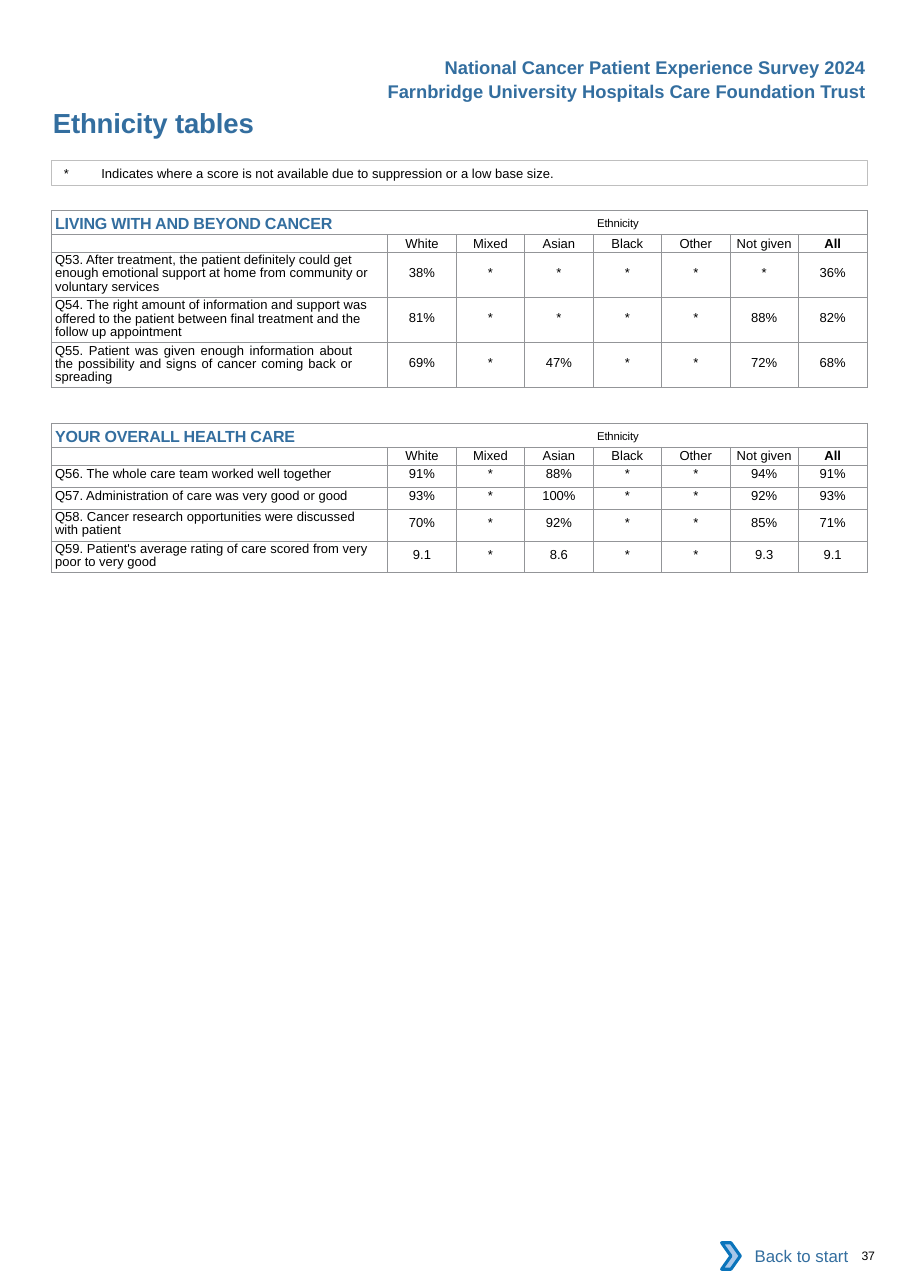
from lxml import etree
from pptx import Presentation
from pptx import util as u
from pptx.dml.color import RGBColor
from pptx.enum import shapes, text
from pptx.oxml.ns import qn

WIDTH, HEIGHT = 8.26, 11.69
LEFT, SPAN, QUESTION = 0.47, 7.4, 3.05
BLUE, BLACK, GREY, WHITE = "336E9F", "000000", "939598", "FFFFFF"
TITLE = "Ethnicity tables"
HEADINGS = ["National Cancer Patient Experience Survey 2024",
            "Farnbridge University Hospitals Care Foundation Trust"]
NOTE = "*\tIndicates where a score is not available due to suppression or a low base size."
GROUPS = ["White", "Mixed", "Asian", "Black", "Other", "Not given", "All"]
JUSTIFIED = "Q55"
TABLES = [
    (1.91, "LIVING WITH AND BEYOND CANCER", [
        (3, "Q53. After treatment, the patient definitely could get enough emotional support "
            "at home from community or voluntary services",
         ["38%", "*", "*", "*", "*", "*", "36%"]),
        (3, "Q54. The right amount of information and support was offered to the patient "
            "between final treatment and the follow up appointment",
         ["81%", "*", "*", "*", "*", "88%", "82%"]),
        (3, "Q55. Patient was given enough information about the possibility and signs of "
            "cancer coming back or spreading",
         ["69%", "*", "47%", "*", "*", "72%", "68%"]),
    ]),
    (3.84, "YOUR OVERALL HEALTH CARE", [
        (1, "Q56. The whole care team worked well together",
         ["91%", "*", "88%", "*", "*", "94%", "91%"]),
        (1, "Q57. Administration of care was very good or good",
         ["93%", "*", "100%", "*", "*", "92%", "93%"]),
        (2, "Q58. Cancer research opportunities were discussed with patient",
         ["70%", "*", "92%", "*", "*", "85%", "71%"]),
        (2, "Q59. Patient's average rating of care scored from very poor to very good",
         ["9.1", "*", "8.6", "*", "*", "9.3", "9.1"]),
    ]),
]
ROW_HEIGHT = {1: 0.2, 2: 0.29, 3: 0.41}
SCORE_TOP = {1: 0.02, 2: 0.06, 3: 0.12}
CENTER, RIGHT = text.PP_ALIGN.CENTER, text.PP_ALIGN.RIGHT
MIDDLE = text.MSO_ANCHOR.MIDDLE


def color(value):
    return RGBColor.from_string(value)


def apply(target, values):
    for name, value in values.items():
        setattr(target, name, value)


def margins(target, left=0, top=0, right=0, bottom=0):
    sides = dict(left=left, top=top, right=right, bottom=bottom)
    apply(target, {f"margin_{side}": u.Inches(size) for side, size in sides.items()})


def write(para, words, size=8.5, ink=BLACK, bold=False, spacing=0, **layout):
    apply(para, layout)
    span = para.add_run()
    span.text = words
    apply(span.font, dict(name="Arial", size=u.Pt(size), bold=bold))
    span.font.color.rgb = color(ink)
    if spacing:
        span.font._element.set("spc", str(spacing))
    return span


def indent(para, left, tab=None):
    properties = para._p.get_or_add_pPr()
    properties.set("marL", str(u.Inches(left)))
    if tab:
        stops = etree.SubElement(properties, qn("a:tabLst"))
        etree.SubElement(stops, qn("a:tab"), pos=str(u.Inches(tab)), algn="l")


def textbox(page, place, wrap=True):
    frame = page.shapes.add_textbox(*map(u.Inches, place)).text_frame
    frame.word_wrap = wrap
    return frame


def shape(page, kind, place, fill=None, line=None, weight=0.5):
    box = page.shapes.add_shape(kind, *map(u.Inches, place))
    box.shadow.inherit = False
    for paint, value in ((box.fill, fill), (box.line.fill, line)):
        if value:
            paint.solid()
            paint.fore_color.rgb = color(value)
        else:
            paint.background()
    if line:
        box.line.width = u.Pt(weight)
    return box


def prepare(cell):
    margins(cell)
    for side in ("lnL", "lnR", "lnT", "lnB"):
        edge = etree.SubElement(cell._tc.get_or_add_tcPr(), qn(f"a:{side}"), w=str(u.Pt(0.5)))
        fill = etree.SubElement(edge, qn("a:solidFill"))
        etree.SubElement(fill, qn("a:srgbClr"), val=GREY)
    cell.fill.background()


def add_scores(page, top, heading, questions):
    heights = [0.22, 0.16] + [ROW_HEIGHT[lines] for lines, *_ in questions]
    columns = len(GROUPS) + 1
    place = (LEFT, top, SPAN, sum(heights))
    table = page.shapes.add_table(len(heights), columns, *map(u.Inches, place)).table
    apply(table, dict(first_row=False, horz_banding=False))
    for row, height in zip(table.rows, heights):
        row.height = u.Inches(height)
    for index, column in enumerate(table.columns):
        column.width = u.Inches((SPAN - QUESTION) / len(GROUPS) if index else QUESTION)
    for cell in table.iter_cells():
        prepare(cell)

    banner = table.cell(0, 0)
    banner.merge(table.cell(0, columns - 1))
    banner.vertical_anchor = MIDDLE
    para = banner.text_frame.paragraphs[0]
    indent(para, 0.03, 4.92)
    write(para, heading + "\t", 10.5, BLUE, True, -10)
    write(para, "Ethnicity", 12.8, spacing=-10).font._element.set("baseline", "10000")

    for index, group in enumerate(GROUPS, 1):
        cell = table.cell(1, index)
        cell.vertical_anchor = MIDDLE
        write(cell.text_frame.paragraphs[0], group, bold=group == "All",
              alignment=CENTER, line_spacing=u.Pt(9.9))

    for row, (lines, question, scores) in enumerate(questions, 2):
        cell = table.cell(row, 0)
        para = cell.text_frame.paragraphs[0]
        justified = question.startswith(JUSTIFIED)
        margins(cell, top=0.02, right=0.32 if justified else 0.14)
        write(para, question, line_spacing=u.Pt(8.6) if lines > 1 else None,
              alignment=text.PP_ALIGN.JUSTIFY if justified else None)
        indent(para, 0.03)
        for index, score in enumerate(scores, 1):
            cell = table.cell(row, index)
            margins(cell, top=SCORE_TOP[lines])
            write(cell.text_frame.paragraphs[0], score, alignment=CENTER)

    for cell in table.iter_cells():
        if not cell.text_frame.text:
            etree.SubElement(cell.text_frame.paragraphs[0]._p, qn("a:endParaRPr"), sz="850")


def main():
    """Build the ethnicity tables page and save it."""
    deck = Presentation()
    apply(deck, dict(slide_width=u.Inches(WIDTH), slide_height=u.Inches(HEIGHT)))
    page = deck.slides.add_slide(deck.slide_layouts[6])

    for index, heading in enumerate(HEADINGS):
        frame = textbox(page, (3.38, 0.46 + 0.22 * index, 4.58, 0.3), wrap=False)
        write(frame.paragraphs[0], heading, 12, BLUE, True, alignment=RIGHT)

    frame = textbox(page, (LEFT, 0.96, 4.5, 0.3))
    margins(frame)
    indent(frame.paragraphs[0], 0.01)
    write(frame.paragraphs[0], TITLE, 18, BLUE, True, -10)

    rectangle = shapes.MSO_SHAPE.RECTANGLE
    frame = shape(page, rectangle, (LEFT, 1.46, SPAN, 0.22), line="BFBFBF").text_frame
    margins(frame, top=0.04, bottom=0.04)
    para = frame.paragraphs[0]
    para.alignment = text.PP_ALIGN.LEFT
    indent(para, 0.11, 0.34)
    write(para, NOTE)

    for top, heading, questions in TABLES:
        add_scores(page, top, heading, questions)

    frame = shape(page, rectangle, (6.62, 11.19, 1.18, 0.42), fill=WHITE).text_frame
    frame.vertical_anchor = MIDDLE
    write(frame.paragraphs[0], "Back to start", 11, BLUE, alignment=RIGHT)
    shape(page, shapes.MSO_SHAPE.CHEVRON, (6.55, 11.28, 0.17, 0.24), "A8C7E9", "0A74BB", 2)

    frame = textbox(page, (7.72, 11.33, 0.51, 0.13))
    margins(frame)
    indent(frame.paragraphs[0], 0.1)
    write(frame.paragraphs[0], "37", 8, spacing=-20)

    deck.save("out.pptx")


if __name__ == "__main__":
    main()
